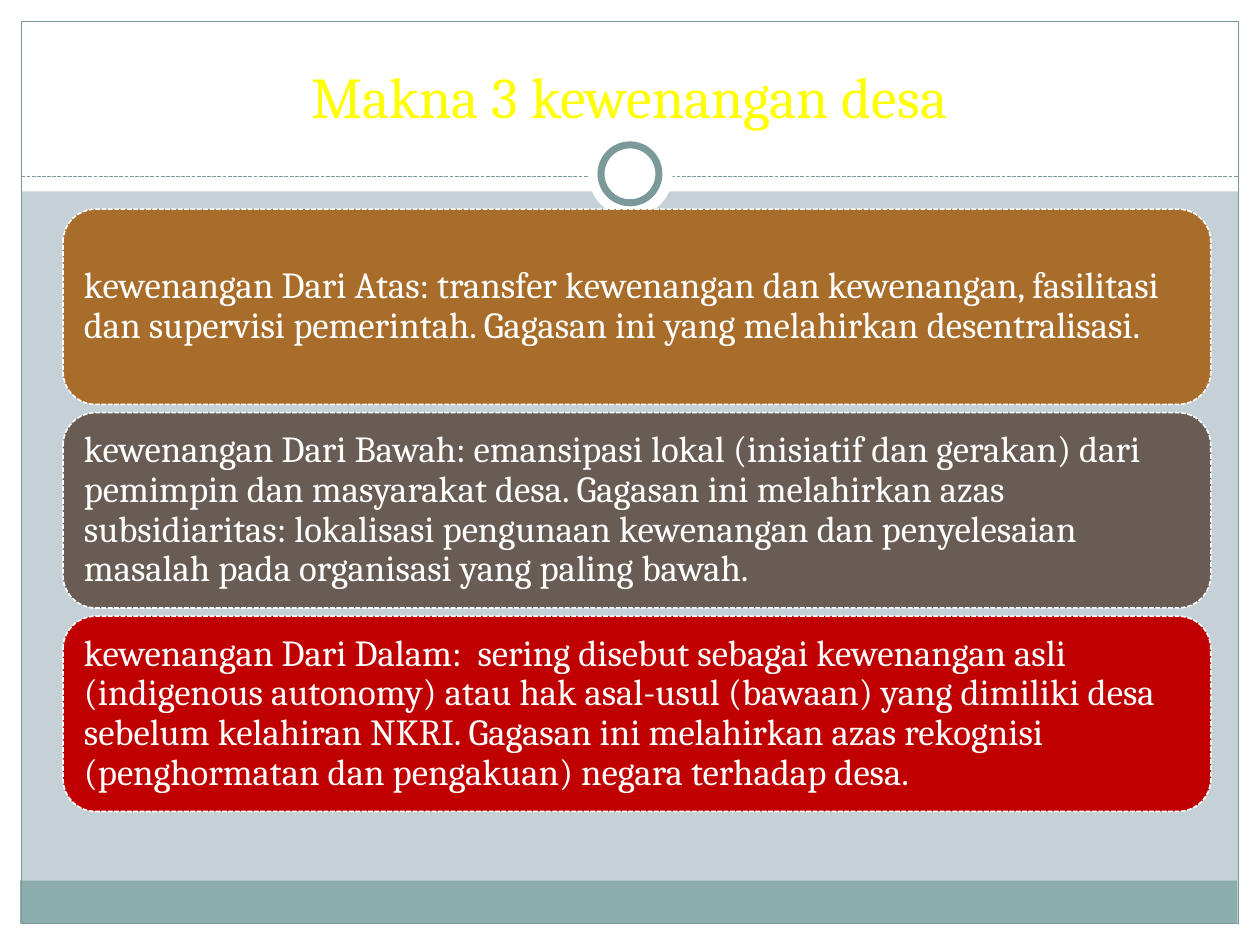
import pptx
import pptx.util
import pptx.dml.color
import pptx.enum.dml
import pptx.enum.shapes
import pptx.enum.text
import lxml.etree

Inches = pptx.util.Inches
Pt = pptx.util.Pt
Kind = pptx.enum.shapes.MSO_SHAPE
Align = pptx.enum.text.PP_ALIGN
Anchor = pptx.enum.text.MSO_ANCHOR
Dash = pptx.enum.dml.MSO_LINE


def tint(text):
    return pptx.dml.color.RGBColor.from_string(text)


def draw(kind, left, top, width, height, fill=None, edge=None, weight=0.75):
    shape = slide.shapes.add_shape(
        kind, Inches(left), Inches(top), Inches(width), Inches(height))
    shape.shadow.inherit = False
    if fill:
        shape.fill.solid()
        shape.fill.fore_color.rgb = tint(fill)
    else:
        shape.fill.background()
    if edge:
        shape.line.color.rgb = tint(edge)
        shape.line.width = Pt(weight)
    else:
        shape.line.fill.background()
    return shape


deck = pptx.Presentation()
deck.slide_width = Inches(10)
deck.slide_height = Inches(7.5)
slide = deck.slides.add_slide(deck.slide_layouts[6])
slide.background.fill.solid()
slide.background.fill.fore_color.rgb = tint("C5D1D7")

bands = [
    (0, 7.33, 10, 0.17, "FFFFFF"),
    (0, 0, 10, 1.52, "FFFFFF"),
    (0, 0, 0.17, 7.5, "FFFFFF"),
    (9.83, 0, 0.17, 7.5, "FFFFFF"),
    (0.16, 6.99, 9.66, 0.34, "8CADAE"),
]
for band in bands:
    draw(Kind.RECTANGLE, *band)
draw(Kind.RECTANGLE, 0.17, 0.17, 9.66, 7.16, edge="7C999A")

rule = slide.shapes.add_connector(
    pptx.enum.shapes.MSO_CONNECTOR.STRAIGHT,
    Inches(0.17), Inches(1.4), Inches(9.83), Inches(1.4))
rule.line.color.rgb = tint("7C999A")
rule.line.width = Pt(0.75)
rule.line.dash_style = Dash.SQUARE_DOT
lxml.etree.SubElement(rule._element.spPr, pptx.oxml.ns.qn("a:effectLst"))

draw(Kind.OVAL, 4.67, 1.05, 0.67, 0.67, "FFFFFF")
draw(Kind.OVAL, 4.77, 1.15, 0.46, 0.46, "FFFFFF", "7C999A", 4)

title = slide.shapes.add_textbox(
    Inches(0.33), Inches(0.25), Inches(9.33), Inches(0.83))
frame = title.text_frame
frame.word_wrap = True
frame.vertical_anchor = Anchor.BOTTOM
line = frame.paragraphs[0]
line.text = "Makna 3 kewenangan desa"
line.alignment = Align.CENTER
line.font.size = Pt(33)
line.font.name = "Cambria"
line.font.color.rgb = tint("FFFF00")

cards = [
    ("A96D2B", "kewenangan Dari Atas: transfer kewenangan dan kewenangan, "
     "fasilitasi dan supervisi pemerintah. Gagasan ini yang melahirkan "
     "desentralisasi."),
    ("695C54", "kewenangan Dari Bawah: emansipasi lokal (inisiatif dan "
     "gerakan) dari pemimpin dan masyarakat desa. Gagasan ini melahirkan "
     "azas subsidiaritas: lokalisasi pengunaan kewenangan dan penyelesaian "
     "masalah pada organisasi yang paling bawah."),
    ("C00000", "kewenangan Dari Dalam:  sering disebut sebagai kewenangan "
     "asli (indigenous autonomy) atau hak asal-usul (bawaan) yang dimiliki "
     "desa sebelum kelahiran NKRI. Gagasan ini melahirkan azas rekognisi "
     "(penghormatan dan pengakuan) negara terhadap desa."),
]
for row, (fill, text) in enumerate(cards):
    card = draw(Kind.ROUNDED_RECTANGLE, 0.5, 1.66 + row * 1.615, 9.11, 1.55,
                fill, "FFFFFF", 0.9)
    card.line.dash_style = Dash.SQUARE_DOT
    frame = card.text_frame
    frame.word_wrap = True
    frame.vertical_anchor = Anchor.MIDDLE
    frame.margin_left = frame.margin_right = Inches(0.09)
    frame.margin_top = frame.margin_bottom = Inches(0.09)
    line = frame.paragraphs[0]
    line.text = text
    line.alignment = Align.LEFT
    line.line_spacing = 0.9
    line.font.size = Pt(21)
    line.font.name = "Cambria"
    line.font.color.rgb = tint("FFFFFF")

deck.save("out.pptx")
